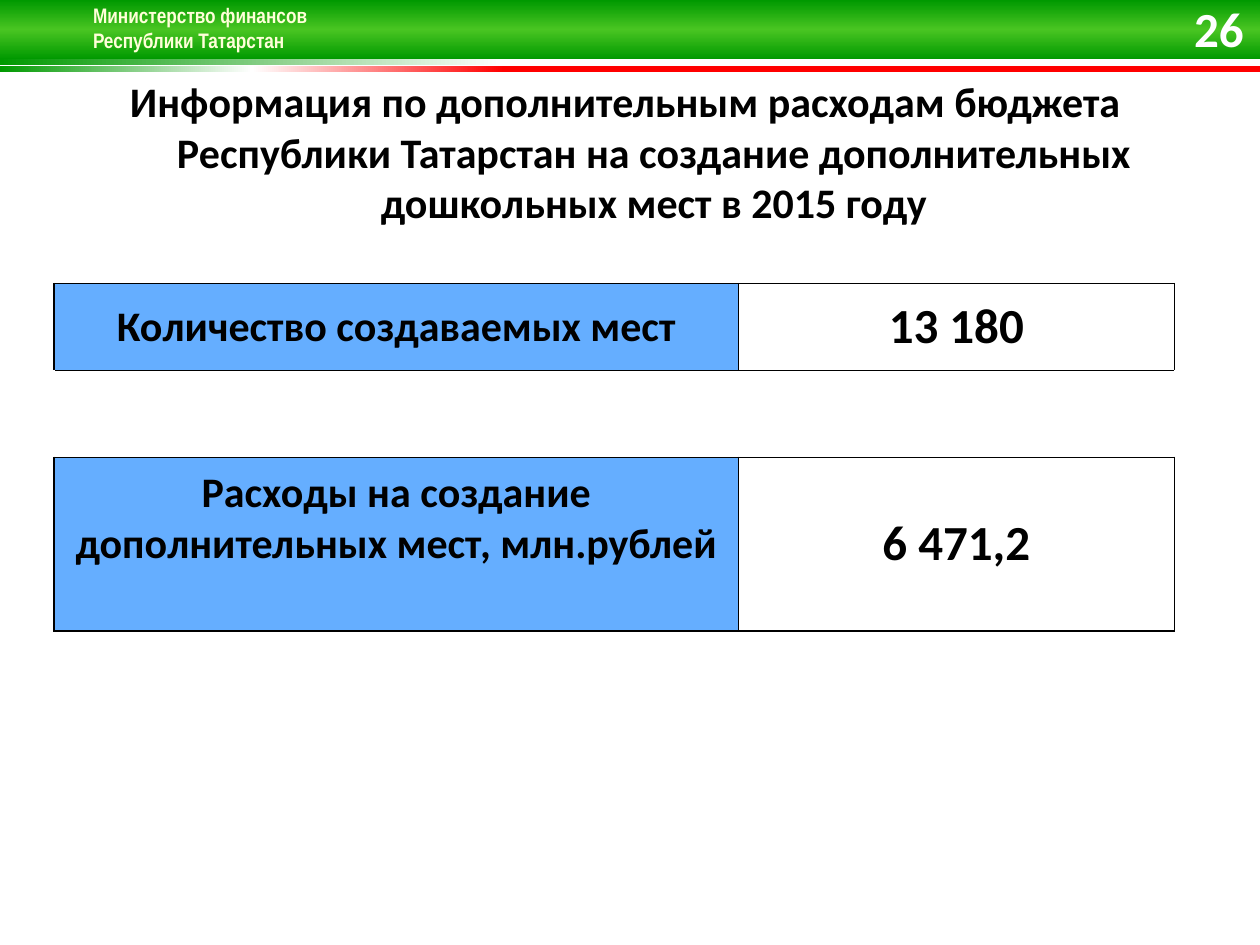
from lxml import etree
from pptx import Presentation
from pptx.dml.color import RGBColor
from pptx.enum.shapes import MSO_SHAPE
from pptx.enum.text import MSO_ANCHOR, MSO_AUTO_SIZE, PP_ALIGN
from pptx.oxml import parse_xml
from pptx.oxml.ns import nsdecls, qn
from pptx.util import Inches, Pt

RECTANGLE = MSO_SHAPE.RECTANGLE
TOP, MIDDLE = MSO_ANCHOR.TOP, MSO_ANCHOR.MIDDLE
LEFT, CENTER, RIGHT = PP_ALIGN.LEFT, PP_ALIGN.CENTER, PP_ALIGN.RIGHT
NO_AUTOFIT = MSO_AUTO_SIZE.NONE

# Content
MINISTRY = "Министерство финансов\vРеспублики Татарстан"
TITLE = ("Информация по дополнительным расходам бюджета \v"
         "Республики Татарстан на создание дополнительных дошкольных мест в 2015 году")
PAGE_NUMBER = "26"
INDICATORS = [  # label, value; None is the gap between the two rows
    ("Количество создаваемых мест", "13 180"),
    None,
    ("Расходы на создание дополнительных мест, млн.рублей", "6 471,2"),
]

THEME = {
    "font": "Calibri", "header_font": "Arial Narrow",
    "text": "000000", "inverse": "FFFFFF", "header_text": "FFFFD9",
    "label_fill": "65AEFF", "border": "000000",
    "header_size": 12, "body_size": 24, "number_size": 28,
}

# Header bands: top, height, gradient angle, stops (percent, colour)
BANDS = [
    (0.47, 0.05, 180, [(0, "FFFFFF"), (60, "FFFFFF"), (100, "009900")]),
    (0.52, 0.05, 180, [(60, "FF0000"), (80, "FFFFFF"), (100, "009900")]),
    (0, 0.47, 90, [(0, "009900"), (50, "49C522"), (100, "009900")]),
]

# Table geometry
COLUMN_WIDTHS = [5.43, 3.46]
ROW_HEIGHTS = [0.69, 0.69, 1.38]
CELL_MARGIN = 0.08
LABEL_RAISE = 0.4  # extra bottom margin that lifts the two-line label


def write(frame, text, size, color, align, font=THEME["font"]):
    frame.text = text
    paragraph = frame.paragraphs[0]
    paragraph.alignment = align
    for run in paragraph.runs:
        run.font.name = font
        run.font.size = Pt(size)
        run.font.bold = True
        run.font.color.rgb = RGBColor.from_string(color)
    return paragraph


def add_band(slide, width, top, height, angle, stops):
    band = slide.shapes.add_shape(RECTANGLE, 0, Inches(top), width, Inches(height))
    band.shadow.inherit = False
    band.line.fill.background()
    stop_xml = "".join(
        f'<a:gs pos="{position * 1000}"><a:srgbClr val="{color}"/></a:gs>'
        for position, color in stops)
    gradient = parse_xml(
        f'<a:gradFill {nsdecls("a")} rotWithShape="1"><a:gsLst>{stop_xml}</a:gsLst>'
        f'<a:lin ang="{angle * 60000}" scaled="0"/></a:gradFill>')
    band._element.spPr.find(qn("a:prstGeom")).addnext(gradient)


def add_text(slide, box, text, size, color, align, anchor, font=THEME["font"]):
    frame = slide.shapes.add_textbox(*map(Inches, box)).text_frame
    frame.word_wrap = True
    frame.vertical_anchor = anchor
    return write(frame, text, size, color, align, font)


def add_text_shadow(paragraph):
    for run in paragraph.runs:
        fill = run.font._element.find(qn("a:solidFill"))
        fill.addnext(parse_xml(
            f'<a:effectLst {nsdecls("a")}><a:outerShdw blurRad="38100" dist="38100" '
            'dir="2700000"><a:srgbClr val="000000"/></a:outerShdw></a:effectLst>'))


def set_borders(cell, sides):
    properties = cell._tc.get_or_add_tcPr()
    for side in sides:
        line = etree.SubElement(properties, qn(f"a:ln{side}"), w=str(Pt(1)))
        fill = etree.SubElement(line, qn("a:solidFill"))
        etree.SubElement(fill, qn("a:srgbClr"), val=THEME["border"])


def add_indicator_table(slide):
    table = slide.shapes.add_table(
        len(ROW_HEIGHTS), len(COLUMN_WIDTHS), Inches(0.43), Inches(2.25),
        Inches(sum(COLUMN_WIDTHS)), Inches(sum(ROW_HEIGHTS))).table
    table.first_row = table.horz_banding = False
    for column, width in zip(table.columns, COLUMN_WIDTHS):
        column.width = Inches(width)
    for row, height in zip(table.rows, ROW_HEIGHTS):
        row.height = Inches(height)

    sizes = (THEME["body_size"], THEME["number_size"])
    for row, indicator in zip(table.rows, INDICATORS):
        label_cell, value_cell = row.cells
        for cell in (label_cell, value_cell):
            set_borders(cell, "LRTB" if indicator else "TB")
            cell.fill.background()
        if indicator is None:
            label_cell.merge(value_cell)
            continue
        for cell, text, size in zip((label_cell, value_cell), indicator, sizes):
            cell.vertical_anchor = MIDDLE
            cell.margin_left = cell.margin_right = Inches(CELL_MARGIN)
            cell.margin_top = cell.margin_bottom = Inches(CELL_MARGIN)
            write(cell.text_frame, text, size, THEME["text"], CENTER)
        label_cell.fill.solid()
        label_cell.fill.fore_color.rgb = RGBColor.from_string(THEME["label_fill"])
    table.cell(2, 0).margin_bottom = Inches(CELL_MARGIN + LABEL_RAISE)


def main():
    presentation = Presentation()
    presentation.slide_width, presentation.slide_height = Inches(10), Inches(7.5)
    slide = presentation.slides.add_slide(presentation.slide_layouts[5])

    # Header
    for band in BANDS:
        add_band(slide, presentation.slide_width, *band)
    ministry = add_text(slide, (0.64, -0.03, 1.92, 0.71), MINISTRY, THEME["header_size"],
                        THEME["header_text"], LEFT, TOP, THEME["header_font"])
    add_text_shadow(ministry)
    add_text(slide, (9.33, 0.05, 0.64, 0.34), PAGE_NUMBER, THEME["number_size"],
             THEME["inverse"], RIGHT, MIDDLE)

    # Title with a hanging indent
    title = slide.shapes.title
    title.left, title.top, title.width, title.height = map(Inches, (0, 0.55, 10, 1.39))
    title.text_frame.auto_size = NO_AUTOFIT
    title.text_frame.vertical_anchor = TOP
    heading = write(title.text_frame, TITLE, THEME["body_size"], THEME["text"], CENTER)
    indent = heading._p.get_or_add_pPr()
    indent.set("marL", str(Inches(0.38)))
    indent.set("indent", str(Inches(-0.38)))

    # Indicators
    add_indicator_table(slide)
    presentation.save("out.pptx")


if __name__ == "__main__":
    main()
